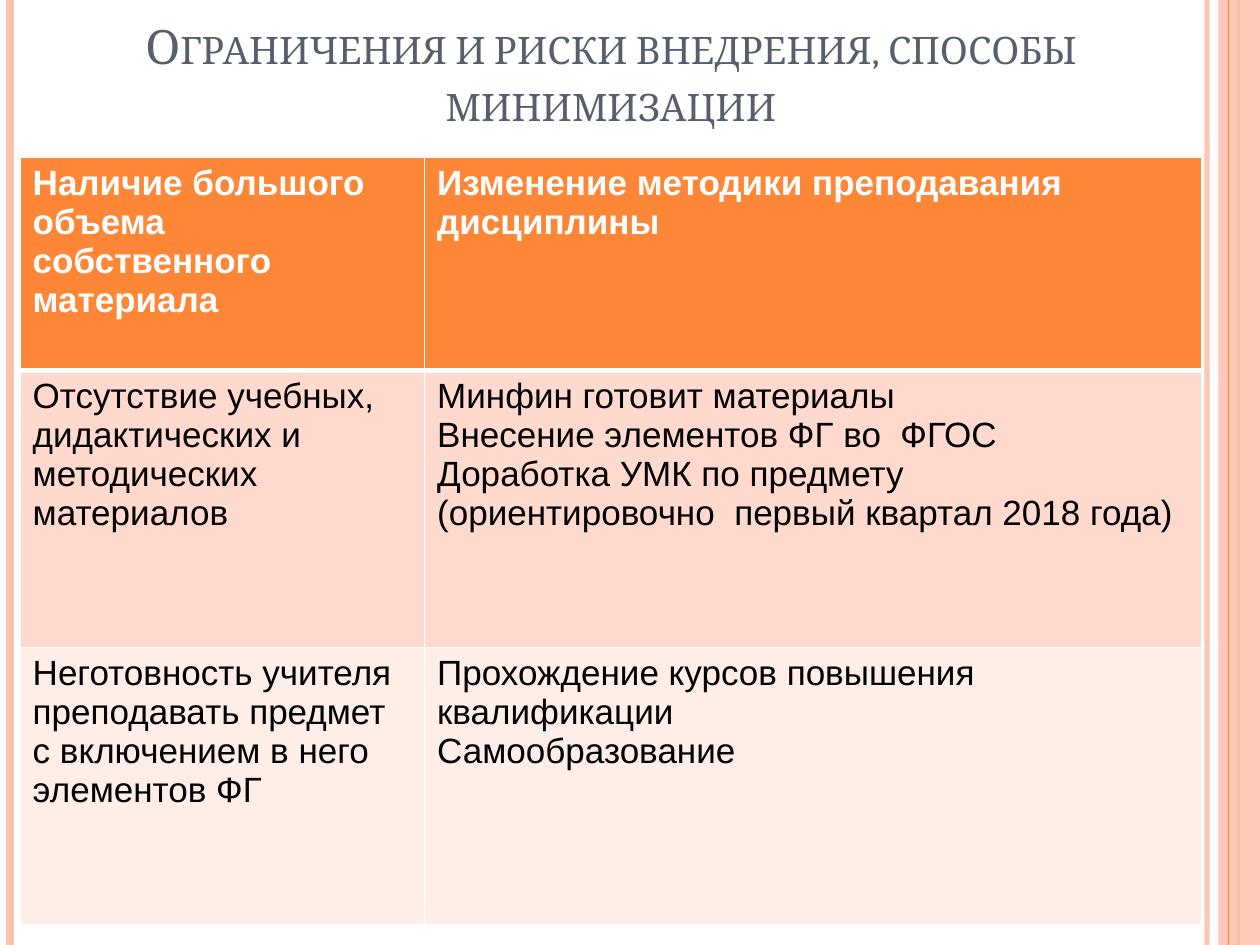
from dataclasses import dataclass

from lxml import etree
from pptx import Presentation
from pptx.dml.color import RGBColor
from pptx.enum import shapes, text
from pptx.oxml.ns import qn
from pptx.util import Inches, Pt


@dataclass(frozen=True)
class Theme:
    accent: str = "FE8637"
    pale: str = "FEC3AE"
    title: str = "575F6D"
    white: str = "FFFFFF"
    black: str = "000000"
    bands: tuple = ("FE8637", "FFD9CE", "FFEDE8")
    title_font: str = "Cambria"
    body_font: str = "Arial"
    title_size: int = 27
    body_size: int = 20


THEME = Theme()
WIDTH, HEIGHT = 10, 7.5
LEFT, CONTENT_WIDTH = 0.16, 9.38
TITLE_HEIGHT, TABLE_TOP = 1.09, 1.25

TITLE = "Ограничения и риски внедрения, способы минимизации"
ROWS = [
    ("Наличие большого объема собственного материала",
     "Изменение методики преподавания дисциплины"),
    ("Отсутствие учебных, дидактических и методических материалов",
     "Минфин готовит материалы\n"
     "Внесение элементов ФГ во  ФГОС\n"
     "Доработка УМК по предмету (ориентировочно  первый квартал 2018 года)"),
    ("Неготовность учителя преподавать предмет с включением в него элементов ФГ",
     "Прохождение курсов повышения квалификации\nСамообразование"),
]
COL_WIDTHS = (3.21, 6.17)
ROW_HEIGHTS = (1.69, 2.2, 2.2)

BACK_STRIPES = [(9.58, THEME.pale, 3, 93), (0.08, THEME.pale, 4.5, 100),
                (9.83, THEME.accent, 1.5, 100)]
SIDE_BAND = (9.67, 0.33, THEME.pale, 87)
FRONT_STRIPES = [(9.75, THEME.accent, 0.75, 100)]


def set_opacity(sp, percent):
    if percent < 100:
        for color in sp._element.spPr.iter(qn("a:srgbClr")):
            etree.SubElement(color, qn("a:alpha"), val=str(percent * 1000))


def add_stripes(slide, stripes):
    for x, color, weight, opacity in stripes:
        line = slide.shapes.add_connector(
            shapes.MSO_CONNECTOR.STRAIGHT,
            Inches(x), 0, Inches(x), Inches(HEIGHT))
        line.line.color.rgb = RGBColor.from_string(color)
        line.line.width = Pt(weight)
        set_opacity(line, opacity)
        etree.SubElement(line._element.spPr, qn("a:effectLst"))


def add_side_band(slide):
    x, width, color, opacity = SIDE_BAND
    sp = slide.shapes.add_shape(shapes.MSO_SHAPE.RECTANGLE,
                                Inches(x), 0, Inches(width), Inches(HEIGHT))
    sp.shadow.inherit = False
    sp.fill.solid()
    sp.fill.fore_color.rgb = RGBColor.from_string(color)
    sp.line.fill.background()
    set_opacity(sp, opacity)


def format_runs(tf, font, size, color, bold=False):
    for p in tf.paragraphs:
        for r in p.runs:
            r.font.name = font
            r.font.size = Pt(size)
            r.font.bold = bold
            r.font.color.rgb = RGBColor.from_string(color)


def add_title(slide):
    sp = slide.shapes.add_textbox(Inches(LEFT), 0, Inches(CONTENT_WIDTH),
                                  Inches(TITLE_HEIGHT))
    tf = sp.text_frame
    tf.word_wrap = True
    tf.vertical_anchor = text.MSO_ANCHOR.BOTTOM
    tf.text = TITLE
    p = tf.paragraphs[0]
    p.alignment = text.PP_ALIGN.CENTER
    format_runs(tf, THEME.title_font, THEME.title_size, THEME.title)
    p.runs[0].font._element.set("cap", "small")


def set_borders(cell, weights):
    tc_pr = cell._tc.get_or_add_tcPr()
    for i, (side, weight) in enumerate(weights.items()):
        ln = etree.Element(qn(f"a:ln{side}"), w=str(Pt(weight)))
        fill = etree.SubElement(ln, qn("a:solidFill"))
        etree.SubElement(fill, qn("a:srgbClr"), val=THEME.white)
        tc_pr.insert(i, ln)


def add_table(slide):
    table = slide.shapes.add_table(
        len(ROWS), len(COL_WIDTHS), Inches(LEFT), Inches(TABLE_TOP),
        Inches(CONTENT_WIDTH), Inches(sum(ROW_HEIGHTS))).table
    for column, width in zip(table.columns, COL_WIDTHS):
        column.width = Inches(width)
    for i, (row, height) in enumerate(zip(ROWS, ROW_HEIGHTS)):
        table.rows[i].height = Inches(height)
        header = i == 0
        for j, content in enumerate(row):
            cell = table.cell(i, j)
            cell.text = content
            cell.fill.solid()
            cell.fill.fore_color.rgb = RGBColor.from_string(THEME.bands[i])
            format_runs(cell.text_frame, THEME.body_font, THEME.body_size,
                        THEME.white if header else THEME.black, header)
            set_borders(cell, {"L": 1, "R": 1, "T": 3 if i == 1 else 1,
                               "B": 3 if header else 1})


def main():
    prs = Presentation()
    prs.slide_width, prs.slide_height = Inches(WIDTH), Inches(HEIGHT)
    slide = prs.slides.add_slide(prs.slide_layouts[6])
    add_stripes(slide, BACK_STRIPES)
    add_side_band(slide)
    add_stripes(slide, FRONT_STRIPES)
    add_title(slide)
    add_table(slide)
    prs.save("out.pptx")


if __name__ == "__main__":
    main()
